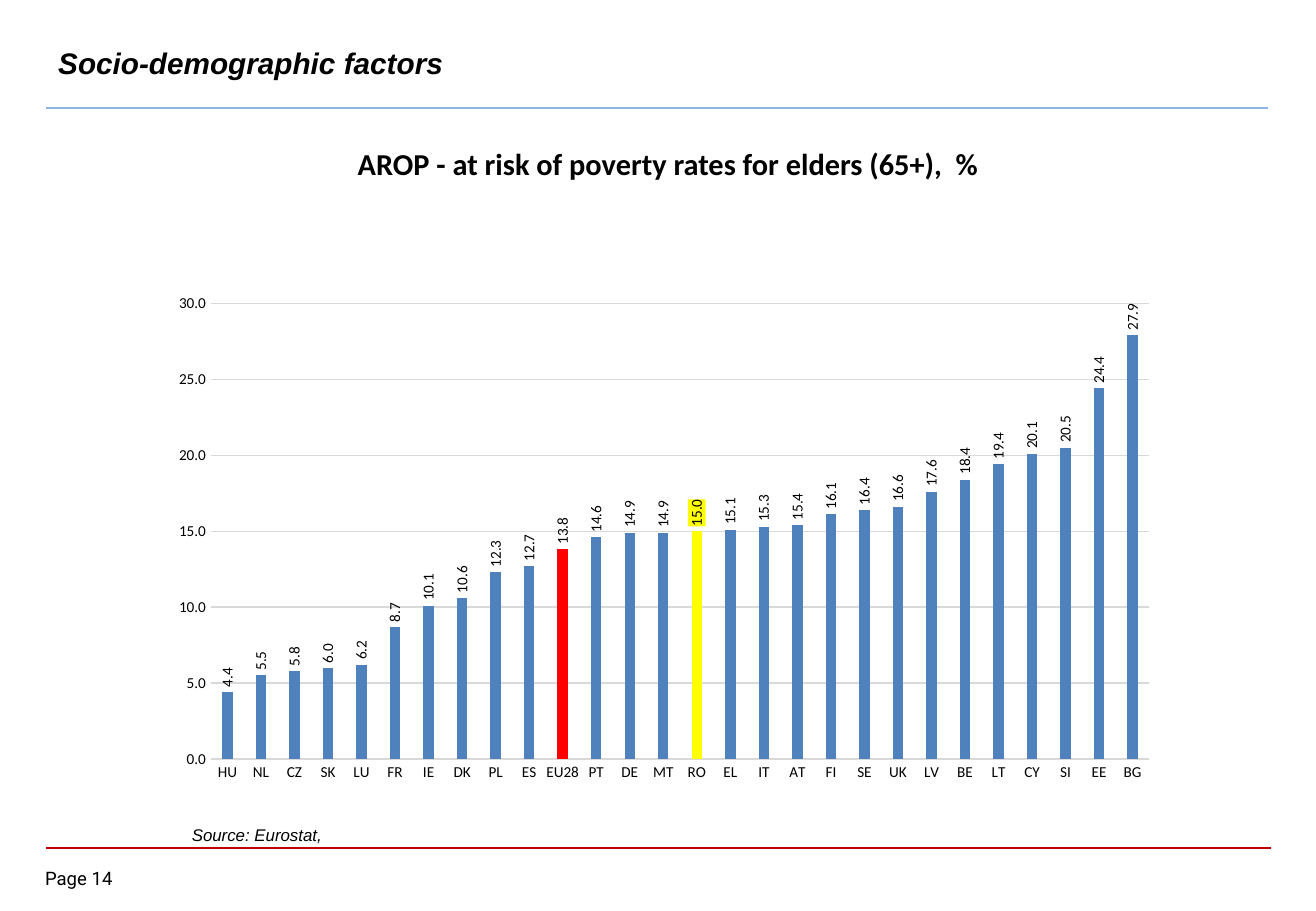
import copy

import lxml.etree
import pptx
import pptx.chart.data
import pptx.dml.color
import pptx.enum.chart
import pptx.enum.shapes
import pptx.enum.text
import pptx.oxml
import pptx.oxml.ns
import pptx.util

Pt = pptx.util.Pt
qn = pptx.oxml.ns.qn
ALIGN = pptx.enum.text.PP_ALIGN
ANCHOR = pptx.enum.text.MSO_ANCHOR

BLACK, GRID = "000000", "D9D9D9"
BAR, EU_BAR, ROMANIA_BAR = "4F81BD", "FF0000", "FFFF00"
NUMBER_FORMAT = "#,##0.0"
POVERTY_RATES = {
    "HU": 4.4, "NL": 5.5, "CZ": 5.8, "SK": 6.0, "LU": 6.2, "FR": 8.7, "IE": 10.1,
    "DK": 10.6, "PL": 12.3, "ES": 12.7, "EU28": 13.8, "PT": 14.6, "DE": 14.9,
    "MT": 14.9, "RO": 15.0, "EL": 15.1, "IT": 15.3, "AT": 15.4, "FI": 16.1,
    "SE": 16.4, "UK": 16.6, "LV": 17.6, "BE": 18.4, "LT": 19.4, "CY": 20.1,
    "SI": 20.5, "EE": 24.4, "BG": 27.9,
}
HIGHLIGHTS = {"EU28": EU_BAR, "RO": ROMANIA_BAR}


def rgb(colour):
    return pptx.dml.color.RGBColor.from_string(colour)


def set_attributes(target, values):
    for name, value in values.items():
        setattr(target, name, value)


def style_font(font, size, name="Calibri", **values):
    set_attributes(font, {"size": Pt(size), "name": name, **values})
    font.color.rgb = rgb(BLACK)


def fill_solid(fill, colour):
    fill.solid()
    fill.fore_color.rgb = rgb(colour)


def add_rule(slide, left, top, width, colour, weight):
    rule = slide.shapes.add_connector(
        pptx.enum.shapes.MSO_CONNECTOR.STRAIGHT,
        Pt(left), Pt(top), Pt(left + width), Pt(top))
    rule.line.color.rgb = rgb(colour)
    rule.line.width = Pt(weight)
    lxml.etree.SubElement(rule._element.spPr, qn("a:effectLst"))


def add_text(slide, box, text, size, font, align=ALIGN.LEFT, frame_values=None, **font_values):
    frame = slide.shapes.add_textbox(*map(Pt, box)).text_frame
    set_attributes(frame, {"word_wrap": True, **(frame_values or {})})
    paragraph = frame.paragraphs[0]
    paragraph.alignment = align
    run = paragraph.add_run()
    run.text = text
    style_font(run.font, size, font, **font_values)


def add_header(slide, left, top, width, height):
    add_text(slide, (left, top, 550.8, 33.8), "Socio-demographic factors", 17.6, "Arial",
             frame_values={"vertical_anchor": ANCHOR.MIDDLE}, bold=True, italic=True)
    add_rule(slide, left, top + height, width, "8EB4E3", 1.5)


def add_footer(slide, left, top, width):
    add_rule(slide, left, top, width, "C00000", 1)
    no_margins = dict.fromkeys(
        ("margin_left", "margin_top", "margin_right", "margin_bottom"), 0)
    add_text(slide, (left - 0.7, top + 11.5, 52.6, 15.8), "Page 14", 11, "Roboto",
             frame_values={**no_margins, "word_wrap": False})


def set_plot_area(chart, **fractions):
    """Fix the inner plot area as fractions of the chart."""
    plot_area = chart._chartSpace.chart.plotArea
    for old in plot_area.findall(qn("c:layout")):
        plot_area.remove(old)
    layout = lxml.etree.Element(qn("c:layout"))
    manual = lxml.etree.SubElement(layout, qn("c:manualLayout"))
    settings = {"layoutTarget": "inner", "xMode": "edge", "yMode": "edge", **fractions}
    for tag, value in settings.items():
        lxml.etree.SubElement(manual, qn("c:" + tag)).set("val", str(value))
    plot_area.insert(0, layout)


def style_axes(chart):
    for axis in (chart.category_axis, chart.value_axis):
        style_font(axis.tick_labels.font, 9)
        set_attributes(axis, {
            "major_tick_mark": pptx.enum.chart.XL_TICK_MARK.NONE,
            "minor_tick_mark": pptx.enum.chart.XL_TICK_MARK.NONE})
    rates = chart.value_axis
    set_attributes(rates, {"minimum_scale": 0, "maximum_scale": 30, "major_unit": 5,
                           "has_major_gridlines": True})
    set_attributes(rates.tick_labels, {"number_format": NUMBER_FORMAT,
                                       "number_format_is_linked": False})
    rates.format.line.fill.background()
    for line in (chart.category_axis.format.line, rates.major_gridlines.format.line):
        line.color.rgb = rgb(GRID)
        line.width = Pt(0.75)


def label_bars(series):
    """Show upright values above the bars, Romania's on its own colour."""
    above = pptx.enum.chart.XL_LABEL_POSITION.OUTSIDE_END
    labels = series.data_labels
    set_attributes(labels, {"show_value": True, "number_format": NUMBER_FORMAT,
                            "number_format_is_linked": False, "position": above})
    style_font(labels.font, 9)
    text_style = labels._element.find(qn("c:txPr"))
    body = text_style.find(qn("a:bodyPr"))
    body.set("rot", "-5400000")
    body.set("vert", "horz")

    romania = series.points[list(POVERTY_RATES).index("RO")].data_label
    style_font(romania.font, 9)
    romania.position = above
    label = labels._element.find(qn("c:dLbl"))
    own_style = label.find(qn("c:txPr"))
    for old in label.findall(qn("c:spPr")):
        label.remove(old)
    background = lxml.etree.Element(qn("c:spPr"))
    solid = lxml.etree.SubElement(background, qn("a:solidFill"))
    lxml.etree.SubElement(solid, qn("a:srgbClr")).set("val", ROMANIA_BAR)
    number_format = copy.deepcopy(labels._element.find(qn("c:numFmt")))
    own_style.addprevious(number_format)
    own_style.addprevious(background)
    label.replace(own_style, copy.deepcopy(text_style))


def add_poverty_chart(slide, left, top, width, height):
    data = pptx.chart.data.CategoryChartData(number_format=NUMBER_FORMAT)
    data.categories = list(POVERTY_RATES)
    data.add_series("Series 1", list(POVERTY_RATES.values()))
    chart = slide.shapes.add_chart(
        pptx.enum.chart.XL_CHART_TYPE.COLUMN_CLUSTERED,
        Pt(left), Pt(top), Pt(width), Pt(height), data).chart
    set_attributes(chart, {"has_title": False, "has_legend": False})
    style_font(chart.font, 10)
    style_axes(chart)
    set_plot_area(chart, x=0.05, y=0.04, w=0.93, h=0.9)

    bars = chart.plots[0]
    set_attributes(bars, {"gap_width": 219, "overlap": -27, "vary_by_categories": False})
    series = bars.series[0]
    fill_solid(series.format.fill, BAR)
    for country, colour in HIGHLIGHTS.items():
        point = series.points[list(POVERTY_RATES).index(country)]
        fill_solid(point.format.fill, colour)
    label_bars(series)


def build_poverty_slide(deck):
    slide = deck.slides.add_slide(deck.slide_layouts[6])
    add_footer(slide, 27.4, 502.6, 725.8)
    add_header(slide, 27.4, 20.2, 724.3, 43.9)
    add_text(slide, (33.1, 82.8, 725.8, 28.8),
             "AROP - at risk of poverty rates for elders (65+),  %",
             18, "Calibri", ALIGN.CENTER, bold=True)
    add_text(slide, (106.6, 485.3, 409, 19.4), "Source: Eurostat,", 10, "Arial", italic=True)
    add_poverty_chart(slide, 95, 167.8, 598.3, 300.2)


def main():
    deck = pptx.Presentation()
    set_attributes(deck, {"slide_width": Pt(780), "slide_height": Pt(540)})
    build_poverty_slide(deck)
    deck.save("out.pptx")


if __name__ == "__main__":
    main()
